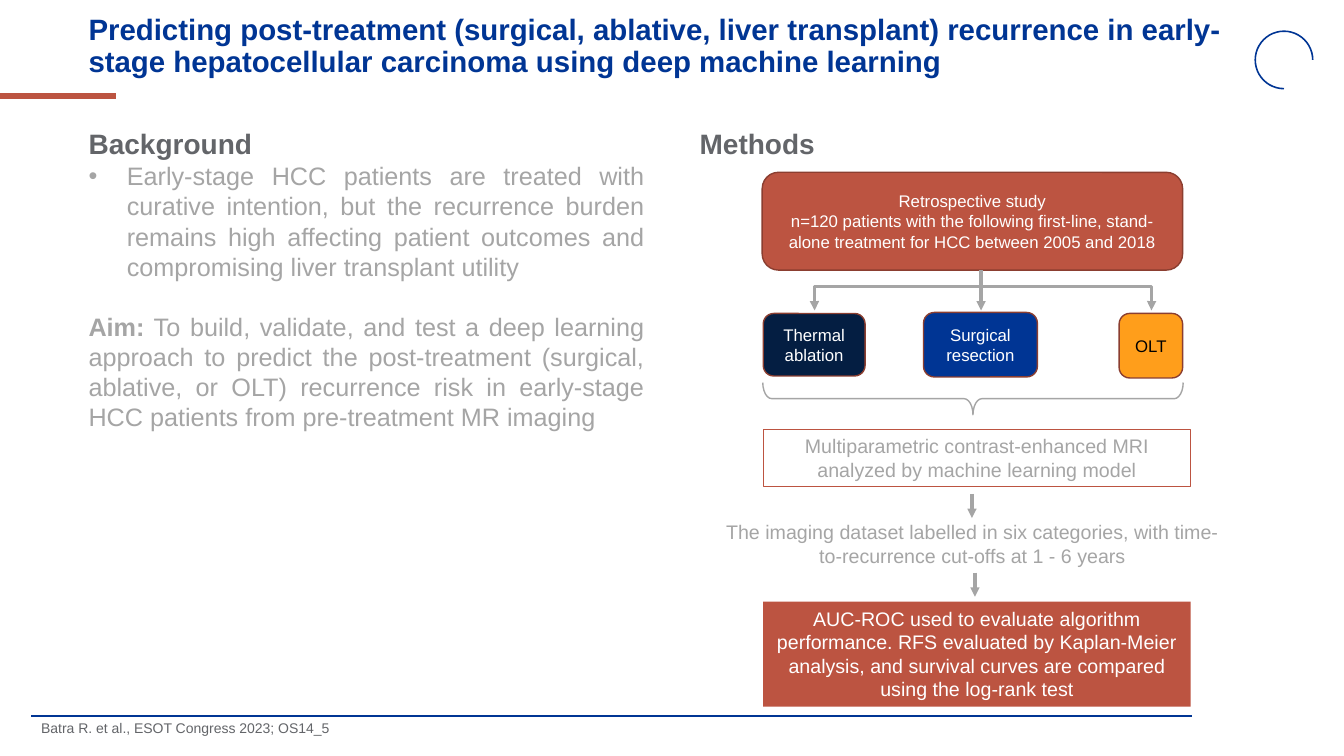
from dataclasses import dataclass

from lxml import etree
from pptx import Presentation
from pptx.dml.color import RGBColor
from pptx.enum.shapes import MSO_CONNECTOR, MSO_SHAPE
from pptx.enum.text import MSO_ANCHOR, PP_ALIGN
from pptx.oxml.ns import qn
from pptx.util import Inches, Pt

STRAIGHT, ELBOW = MSO_CONNECTOR.STRAIGHT, MSO_CONNECTOR.ELBOW
RECT, ROUNDED = MSO_SHAPE.RECTANGLE, MSO_SHAPE.ROUNDED_RECTANGLE
ARC, BRACE = MSO_SHAPE.ARC, MSO_SHAPE.RIGHT_BRACE
TOP, MIDDLE = MSO_ANCHOR.TOP, MSO_ANCHOR.MIDDLE
LEFT, CENTER, JUSTIFY = PP_ALIGN.LEFT, PP_ALIGN.CENTER, PP_ALIGN.JUSTIFY


@dataclass(frozen=True)
class Theme:
    font: str = "Arial"
    blue: str = "003594"
    navy: str = "041E42"
    orange: str = "FF9E1B"
    brick: str = "BC5441"
    brick_edge: str = "8B3E30"
    grey: str = "A5A5A5"
    dark_grey: str = "636569"
    white: str = "FFFFFF"
    black: str = "000000"
    title: int = 21
    heading: int = 20
    body: int = 18
    step: int = 14
    group: int = 12
    source: int = 10


class SlideBuilder:
    def __init__(self, slide, theme):
        self.slide = slide
        self.theme = theme

    def stroke(self, line, color, width):
        line.color.rgb = RGBColor.from_string(color)
        line.width = Pt(width)

    def fill_text(self, frame, paragraphs, anchor=TOP):
        frame.word_wrap = True
        frame.vertical_anchor = anchor
        for index, (runs, size, color, layout) in enumerate(paragraphs):
            paragraph = frame.add_paragraph() if index else frame.paragraphs[0]
            for name, value in layout.items():
                setattr(paragraph, name, value)
            for words, bold in runs:
                run = paragraph.add_run()
                run.text = words
                look = {"name": self.theme.font, "size": Pt(size), "bold": bold}
                for name, value in look.items():
                    setattr(run.font, name, value)
                run.font.color.rgb = RGBColor.from_string(color)

    def text(self, box, paragraphs, anchor=TOP):
        frame = self.slide.shapes.add_textbox(*map(Inches, box)).text_frame
        self.fill_text(frame, paragraphs, anchor)
        return frame

    def shape(self, kind, box, fill=None, edge=None, width=1, adjustments=(), rotation=0):
        shape = self.slide.shapes.add_shape(kind, *map(Inches, box))
        shape.shadow.inherit = False
        shape.rotation = rotation
        for index, value in enumerate(adjustments):
            shape.adjustments[index] = value
        if fill:
            shape.fill.solid()
            shape.fill.fore_color.rgb = RGBColor.from_string(fill)
        else:
            shape.fill.background()
        if edge:
            self.stroke(shape.line, edge, width)
        else:
            shape.line.fill.background()
        return shape

    def box(self, kind, box, words, size, color, fill=None, edge=None, width=1, anchor=MIDDLE):
        shape = self.shape(kind, box, fill, edge, width)
        lines = [([(line, False)], size, color, {"alignment": CENTER}) for line in words]
        self.fill_text(shape.text_frame, lines, anchor)

    def line(self, start, end, color, width, kind=STRAIGHT, arrow=False):
        connector = self.slide.shapes.add_connector(kind, *map(Inches, (*start, *end)))
        self.stroke(connector.line, color, width)
        properties = connector._element.spPr
        if arrow:
            outline = properties.find(qn("a:ln"))
            etree.SubElement(outline, qn("a:tailEnd"), type="triangle")
        if kind == ELBOW:
            guides = properties.find(qn("a:prstGeom")).find(qn("a:avLst"))
            etree.SubElement(guides, qn("a:gd"), name="adj1", fmla="val 100100")
        etree.SubElement(properties, qn("a:effectLst"))

    def bullet(self, paragraph, indent):
        properties = paragraph._p.get_or_add_pPr()
        properties.set("marL", str(Inches(indent)))
        properties.set("indent", str(-Inches(indent)))
        etree.SubElement(properties, qn("a:buFont"), typeface=self.theme.font)
        etree.SubElement(properties, qn("a:buChar"), char="•")


def add_header_and_footer(builder):
    theme = builder.theme
    builder.line((0, 0.95), (1.15, 0.95), theme.brick, 4.5)
    builder.line((0.31, 7.1), (11.82, 7.1), theme.blue, 1.5)
    builder.shape(ARC, (12.45, 0.31, 0.57, 0.57), edge=theme.blue, width=1.13, adjustments=(54, 0))
    title = (
        "Predicting post-treatment (surgical, ablative, liver transplant) recurrence in "
        "early-stage hepatocellular carcinoma using deep machine learning"
    )
    tight = {"line_spacing": 0.9}
    builder.text((0.78, 0.1, 11.5, 0.73), [([(title, True)], theme.title, theme.blue, tight)], MIDDLE)
    source = "Batra R. et al., ESOT Congress 2023; OS14_5"
    builder.text((0.31, 7.11, 7.84, 0.34), [([(source, False)], theme.source, theme.dark_grey, tight)])


def add_background(builder):
    theme = builder.theme
    burden = (
        "Early-stage HCC patients are treated with curative intention, but the recurrence burden "
        "remains high affecting patient outcomes and compromising liver transplant utility"
    )
    aim = (
        " To build, validate, and test a deep learning approach to predict the post-treatment "
        "(surgical, ablative, or OLT) recurrence risk in early-stage HCC patients from "
        "pre-treatment MR imaging"
    )
    justified = {"alignment": JUSTIFY}
    frame = builder.text((0.78, 1.21, 5.71, 3.16), [
        ([("Background", True)], theme.heading, theme.dark_grey, {"alignment": LEFT}),
        ([(burden, False)], theme.body, theme.grey, justified),
        ([("Aim:", True), (aim, False)], theme.body, theme.grey, {**justified, "space_before": Pt(21)}),
    ])
    builder.bullet(frame.paragraphs[1], 0.38)


def add_methods(builder):
    theme = builder.theme
    builder.text((6.84, 1.21, 5.71, 0.44), [([("Methods", True)], theme.heading, theme.dark_grey, {})])
    study = [
        "Retrospective study",
        "n=120 patients with the following first-line, stand-alone treatment for HCC between 2005 and 2018",
    ]
    builder.box(ROUNDED, (7.56, 1.71, 4.17, 0.97), study, theme.group, theme.white, theme.brick, theme.brick_edge)

    treatments = [
        ("Thermal ablation", (7.57, 3.11, 1.01, 0.62), theme.navy, theme.white),
        ("Surgical resection", (9.16, 3.1, 1.13, 0.64), theme.blue, theme.white),
        ("OLT", (11.1, 3.11, 0.63, 0.64), theme.orange, theme.black),
    ]
    for name, place, fill, color in treatments:
        builder.box(ROUNDED, place, [name], theme.group, color, fill, theme.brick_edge)

    fork = (9.73, 2.84)
    builder.line((9.73, 2.68), fork, theme.grey, 2.25)
    for target, kind in ((8.08, ELBOW), (9.73, STRAIGHT), (11.42, ELBOW)):
        builder.line(fork, (target, 3.08), theme.grey, 2.25, kind, arrow=True)
    builder.shape(BRACE, (9.49, 1.87, 0.32, 4.17), edge=theme.grey, adjustments=(0.279, 0.5), rotation=90)

    imaging = ["Multiparametric contrast-enhanced MRI analyzed by machine learning model"]
    builder.box(RECT, (7.57, 4.26, 4.24, 0.57), imaging, theme.step, theme.grey,
                edge=theme.brick, width=0.75, anchor=TOP)
    labels = "The imaging dataset labelled in six categories, with time-to-recurrence cut-offs at 1 - 6 years"
    builder.text((7, 5.11, 5.29, 0.57), [([(labels, False)], theme.step, theme.grey, {"alignment": CENTER})])
    evaluation = [
        "AUC-ROC used to evaluate algorithm performance. RFS evaluated by Kaplan-Meier analysis, "
        "and survival curves are compared using the log-rank test"
    ]
    builder.box(RECT, (7.57, 5.97, 4.24, 1.04), evaluation, theme.step, theme.white, theme.brick, anchor=TOP)
    for x, y in ((9.64, 4.9), (9.67, 5.68)):
        builder.line((x, y), (x, y + 0.24), theme.grey, 2.25, arrow=True)


def main():
    presentation = Presentation()
    presentation.slide_width = Inches(13.33)
    presentation.slide_height = Inches(7.5)
    slide = presentation.slides.add_slide(presentation.slide_layouts[6])
    builder = SlideBuilder(slide, Theme())
    add_header_and_footer(builder)
    add_background(builder)
    add_methods(builder)
    presentation.save("out.pptx")


if __name__ == "__main__":
    main()
